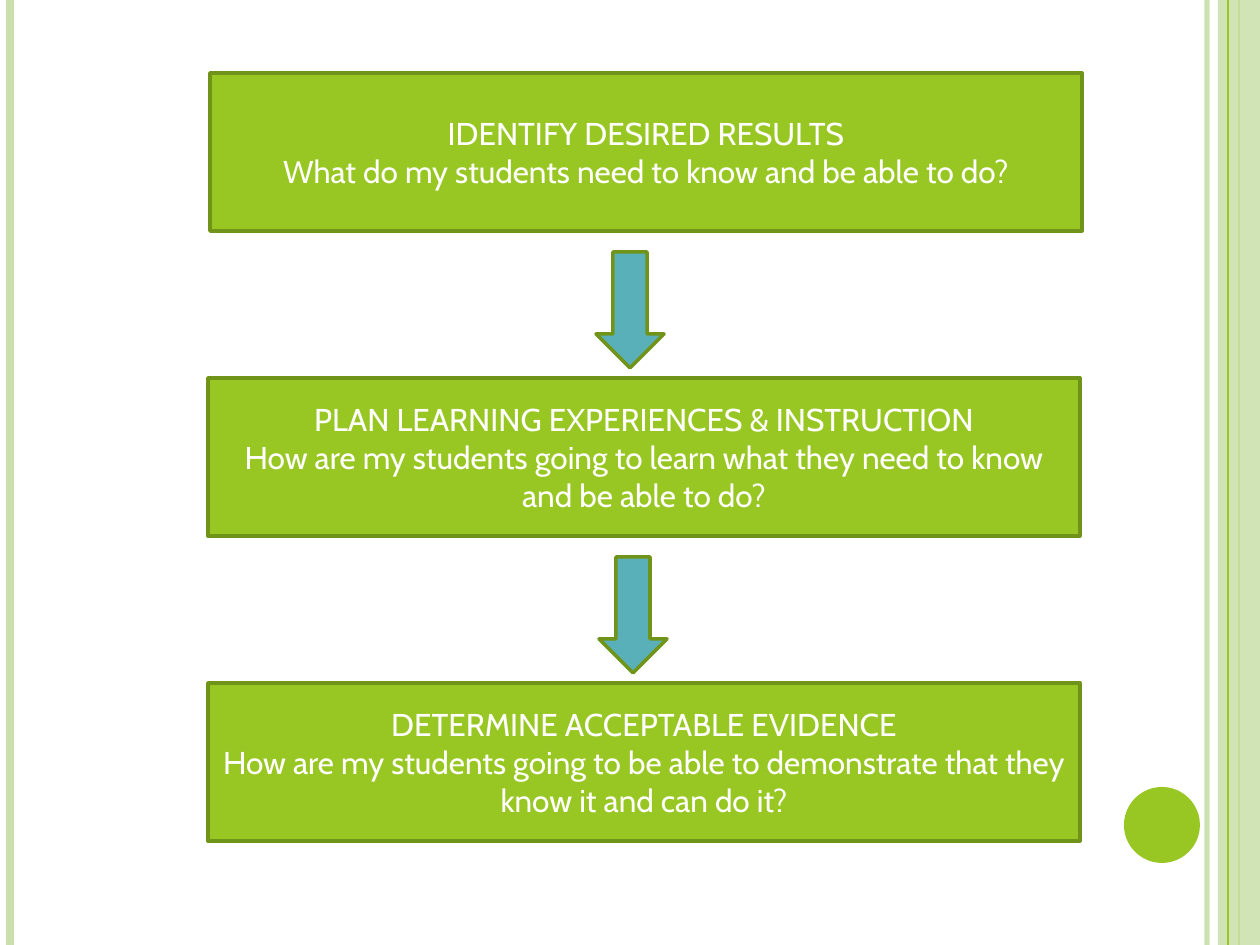
from dataclasses import dataclass

from lxml import etree
from pptx import Presentation, util as u
from pptx.dml.color import RGBColor
from pptx.enum import shapes, text
from pptx.oxml.ns import qn

SCALE = 914400 / 126
WIDE, HIGH = 1260, 945


@dataclass(frozen=True)
class Theme:
    pale: str = "CAE0AC"
    green: str = "98C723"
    edge: str = "70931A"
    teal: str = "59B0B9"
    white: str = "FFFFFF"
    font: str = "Cabin"
    size: int = 18
    border: int = 2


THEME = Theme()
KIND = shapes.MSO_SHAPE

# x, colour, width in points, opacity in percent
STRIPES_BACK = [
    (1207, THEME.pale, 3, 93),
    (10, THEME.pale, 4.5, 100),
    (1239, THEME.green, 1.5, 100),
]
STRIPE_FRONT = (1228, THEME.green, 0.75, 100)

STEPS = [
    (210, "IDENTIFY DESIRED RESULTS",
     "What do my students need to know and be able to do?"),
    (208, "PLAN LEARNING EXPERIENCES & INSTRUCTION",
     "How are my students going to learn what they need to know "
     "and be able to do?"),
    (208, "DETERMINE ACCEPTABLE EVIDENCE",
     "How are my students going to be able to demonstrate that they "
     "know it and can do it?"),
]
ARROWS = [596, 599]
STEP_TOP, ARROW_TOP, PITCH = 73, 252, 305


def px(n):
    return u.Emu(round(n * SCALE))


def rgb(code):
    return RGBColor.from_string(code)


def fade(fill, alpha):
    """Set the opacity, in percent, of a solid fill's colour."""
    for tone in fill.iter(qn("a:srgbClr")):
        etree.SubElement(tone, qn("a:alpha"), val=str(alpha * 1000))


def add_stripe(slide, x, color, width, alpha):
    line = slide.shapes.add_connector(
        shapes.MSO_CONNECTOR.STRAIGHT, px(x), px(0), px(x), px(HIGH))
    line.line.color.rgb = rgb(color)
    line.line.width = u.Pt(width)
    props = line._element.spPr
    if alpha < 100:
        fade(props, alpha)
    etree.SubElement(props, qn("a:effectLst"))


def add_block(slide, kind, box, color, edge=None):
    block = slide.shapes.add_shape(kind, *map(px, box))
    block.shadow.inherit = False
    block.fill.solid()
    block.fill.fore_color.rgb = rgb(color)
    if edge:
        block.line.color.rgb = rgb(edge)
        block.line.width = u.Pt(THEME.border)
    else:
        block.line.fill.background()
    return block


def add_step(slide, x, y, title, query):
    block = add_block(slide, KIND.RECTANGLE, (x, y, 872, 158),
                      THEME.green, THEME.edge)
    frame = block.text_frame
    frame.word_wrap = True
    frame.vertical_anchor = text.MSO_ANCHOR.MIDDLE
    frame.text = f"{title}\n{query}"
    for para in frame.paragraphs:
        para.alignment = text.PP_ALIGN.CENTER
        for run in para.runs:
            run.font.name = THEME.font
            run.font.size = u.Pt(THEME.size)
            run.font.color.rgb = rgb(THEME.white)


def add_frame(slide):
    """Draw the stripes, side band and dot around the content."""
    for stripe in STRIPES_BACK:
        add_stripe(slide, *stripe)
    band = add_block(slide, KIND.RECTANGLE, (1218, 0, WIDE - 1218, HIGH),
                     THEME.pale)
    fade(band._element.spPr, 87)
    add_stripe(slide, *STRIPE_FRONT)
    add_block(slide, KIND.OVAL, (1124, 787, 76, 76), THEME.green)


def main():
    deck = Presentation()
    deck.slide_width, deck.slide_height = px(WIDE), px(HIGH)
    slide = deck.slides.add_slide(deck.slide_layouts[6])
    add_frame(slide)
    for row, (x, title, query) in enumerate(STEPS):
        add_step(slide, x, STEP_TOP + row * PITCH, title, query)
    for row, x in enumerate(ARROWS):
        add_block(slide, KIND.DOWN_ARROW,
                  (x, ARROW_TOP + row * PITCH, 68, 116),
                  THEME.teal, THEME.edge)
    deck.save("out.pptx")


if __name__ == "__main__":
    main()
